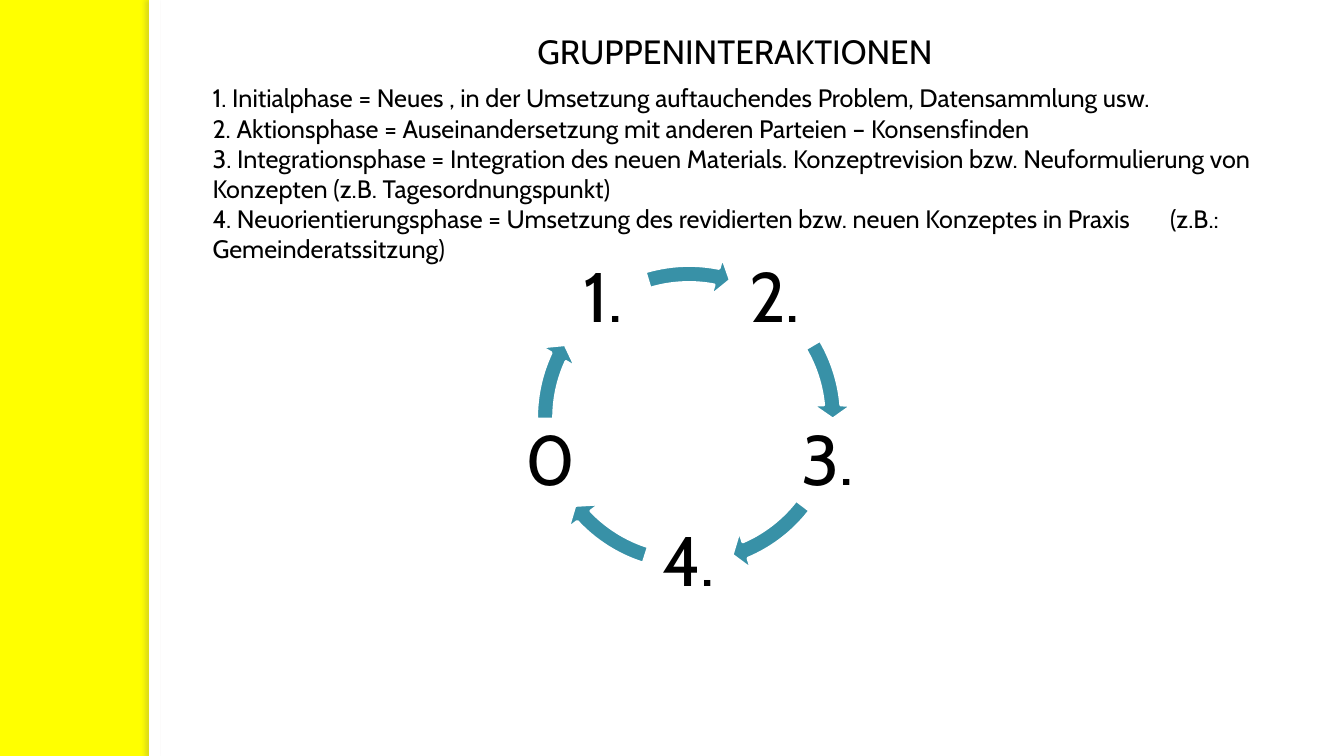
"""Build the slide on group interactions with its cycle of five phases."""
import math

import lxml.etree
import pptx
import pptx.dml.color
import pptx.enum.shapes
import pptx.enum.text
import pptx.oxml.ns
import pptx.util

WHITE = pptx.dml.color.RGBColor(0xFF, 0xFF, 0xFF)
BLACK = pptx.dml.color.RGBColor(0x00, 0x00, 0x00)
YELLOW = pptx.dml.color.RGBColor(0xFF, 0xFF, 0x00)
TEAL = pptx.dml.color.RGBColor(0x38, 0x91, 0xA7)
SHADOW = pptx.dml.color.RGBColor(0x73, 0x6F, 0x63)

FONT = "Cabin"
CELL = pptx.util.Inches(0.1)
COLUMNS, ROWS = 133.33, 75
PANEL_LEFT = 14.8
CENTER_COLUMN, CENTER_ROW = 68.35, 41.45
LABEL_RADIUS, LABEL_SIZE, RING_SIZE = 14.45, 8.7, 32.5

TITLE = "GRUPPENINTERAKTIONEN"
PHASES = [
    "1. Initialphase = Neues , in der Umsetzung auftauchendes Problem, Datensammlung usw.",
    "2. Aktionsphase = Auseinandersetzung mit anderen Parteien – Konsensfinden",
    "3. Integrationsphase = Integration des neuen Materials. Konzeptrevision bzw. "
    "Neuformulierung von Konzepten (z.B. Tagesordnungspunkt)",
    "4. Neuorientierungsphase = Umsetzung des revidierten bzw. neuen Konzeptes in Praxis "
    "\t(z.B.: Gemeinderatssitzung)",
]
CYCLE = [
    ("2.", 329.44, 354.89),
    ("3.", 37.56, 66.91),
    ("4.", 107.49, 136.84),
    ("0", 179.52, 204.96),
    ("1.", 253.31, 281.09),
]


def grid(*cells):
    """Turn grid cells into slide lengths."""
    return [round(cell * CELL) for cell in cells]


def centered_box(column, row, size):
    """Return the grid box of a square around a point."""
    return grid(column - size / 2, row - size / 2, size, size)


def write(text_frame, lines, size, alignment):
    """Write one formatted run per paragraph."""
    text_frame.word_wrap = True
    for index, line in enumerate(lines):
        paragraph = text_frame.add_paragraph() if index else text_frame.paragraphs[0]
        paragraph.alignment = alignment
        run = paragraph.add_run()
        run.text = line
        run.font.name = FONT
        run.font.size = pptx.util.Pt(size)
        run.font.color.rgb = BLACK


def add_panel(slide, left, width):
    """Add a full-height white panel."""
    panel = slide.shapes.add_shape(
        pptx.enum.shapes.MSO_SHAPE.RECTANGLE, *grid(left, 0, width, ROWS))
    panel.shadow.inherit = False
    panel.fill.solid()
    panel.fill.fore_color.rgb = WHITE
    panel.line.fill.background()
    return panel


def add_left_shadow(shape):
    """Cast a soft shadow to the left of a shape."""
    qualified = pptx.oxml.ns.qn
    effects = shape._element.spPr.find(qualified("a:effectLst"))
    shadow = lxml.etree.SubElement(
        effects, qualified("a:outerShdw"), blurRad=str(pptx.util.Pt(3)),
        dist=str(pptx.util.Pt(3)), dir=str(180 * 60000), algn="tl", rotWithShape="0")
    color = lxml.etree.SubElement(shadow, qualified("a:srgbClr"), val=str(SHADOW))
    lxml.etree.SubElement(color, qualified("a:alpha"), val="25000")


def add_title(slide):
    """Place the title in front of the panel."""
    title = slide.shapes.title
    title.left, title.top, title.width, title.height = grid(52.3, 2.6, 61.2, 5)
    title.text_frame.vertical_anchor = pptx.enum.text.MSO_ANCHOR.TOP
    write(title.text_frame, [TITLE], 24, pptx.enum.text.PP_ALIGN.LEFT)
    title.text_frame.auto_size = pptx.enum.text.MSO_AUTO_SIZE.SHAPE_TO_FIT_TEXT
    slide.shapes._spTree.append(title._element)


def add_phases(slide):
    """Add the list of phases."""
    text_box = slide.shapes.add_textbox(*grid(20.1, 7.7, 113.2, 22.2))
    write(text_box.text_frame, PHASES, 18, pptx.enum.text.PP_ALIGN.LEFT)
    text_box.text_frame.auto_size = pptx.enum.text.MSO_AUTO_SIZE.SHAPE_TO_FIT_TEXT


def add_label(group, text, angle):
    """Add a phase number on the cycle."""
    column = CENTER_COLUMN + LABEL_RADIUS * math.cos(angle)
    row = CENTER_ROW + LABEL_RADIUS * math.sin(angle)
    label = group.shapes.add_textbox(*centered_box(column, row, LABEL_SIZE))
    frame = label.text_frame
    frame.margin_left = frame.margin_right = pptx.util.Inches(0.07)
    frame.margin_top = frame.margin_bottom = pptx.util.Inches(0.07)
    frame.vertical_anchor = pptx.enum.text.MSO_ANCHOR.MIDDLE
    write(frame, [text], 50, pptx.enum.text.PP_ALIGN.CENTER)
    frame.paragraphs[0].line_spacing = 0.9


def add_arc_arrow(group, start, end):
    """Add a curved arrow between two angles in degrees."""
    arrow = group.shapes.add_shape(
        pptx.enum.shapes.MSO_SHAPE.CIRCULAR_ARROW,
        *centered_box(CENTER_COLUMN, CENTER_ROW, RING_SIZE))
    values = (0.052, 5.6 * 0.6, end * 0.6, start * 0.6, 0.061)
    for index, value in enumerate(values):
        arrow.adjustments[index] = value
    arrow.shadow.inherit = False
    arrow.fill.solid()
    arrow.fill.fore_color.rgb = TEAL
    arrow.line.color.rgb = WHITE
    arrow.line.width = pptx.util.Pt(2)


def add_cycle(slide):
    """Add the numbers and arrows of the cycle."""
    group = slide.shapes.add_group_shape()
    for index, (text, start, end) in enumerate(CYCLE):
        add_label(group, text, math.radians(-54 + index * 360 / len(CYCLE)))
        add_arc_arrow(group, start, end)


def main():
    """Build and save the presentation."""
    presentation = pptx.Presentation()
    presentation.slide_width, presentation.slide_height = grid(COLUMNS, ROWS)
    slide = presentation.slides.add_slide(presentation.slide_layouts[5])
    slide.background.fill.solid()
    slide.background.fill.fore_color.rgb = YELLOW
    add_panel(slide, PANEL_LEFT, COLUMNS - PANEL_LEFT)
    add_left_shadow(add_panel(slide, PANEL_LEFT, 1.1))
    add_phases(slide)
    add_title(slide)
    add_cycle(slide)
    presentation.save("out.pptx")


if __name__ == "__main__":
    main()
